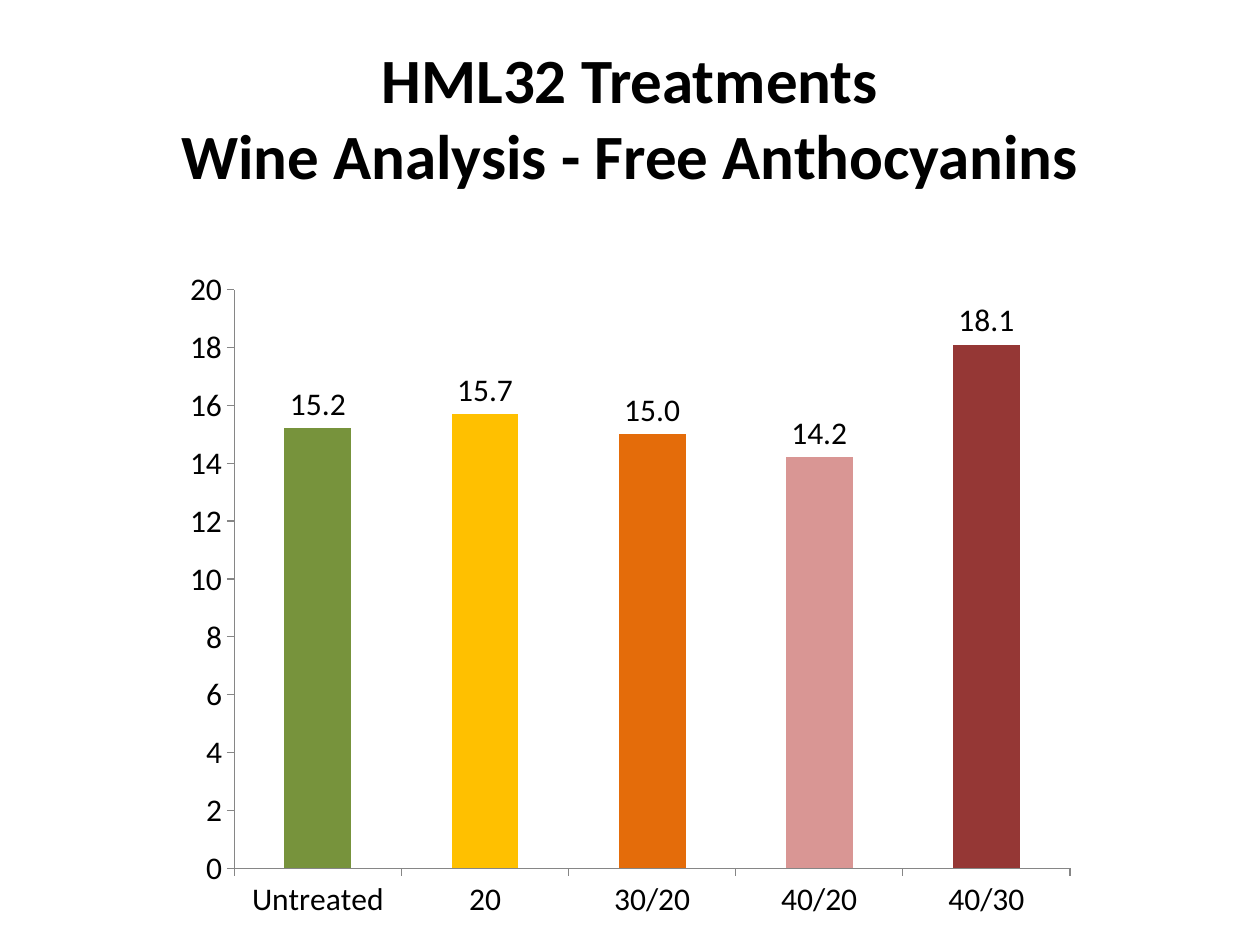
import pptx
import pptx.chart.data
import pptx.dml.color
import pptx.enum.chart
import pptx.enum.text
import pptx.oxml
import pptx.util

RGBColor = pptx.dml.color.RGBColor
Inches = pptx.util.Inches
Pt = pptx.util.Pt

BLACK = RGBColor(0x00, 0x00, 0x00)
GREY = RGBColor(0x86, 0x86, 0x86)
BLUE = RGBColor(0x4F, 0x81, 0xBD)
GREEN = RGBColor(0x77, 0x93, 0x3C)
YELLOW = RGBColor(0xFF, 0xC0, 0x00)
ORANGE = RGBColor(0xE4, 0x6C, 0x0A)
PINK = RGBColor(0xD9, 0x96, 0x94)
RED = RGBColor(0x95, 0x37, 0x35)

FONT = "Calibri"
TREATMENTS = [
    ("Untreated", 15.2, GREEN),
    ("20", 15.7, YELLOW),
    ("30/20", 15.0, ORANGE),
    ("40/20", 14.2, PINK),
    ("40/30", 18.1, RED),
]
PLOT = {"x": 0.067, "y": 0.118, "w": 0.925, "h": 0.799}


def set_attrs(obj, values):
    """Set each attribute named in values on obj."""
    for name, value in values.items():
        setattr(obj, name, value)


def set_font(font, size, bold=False):
    """Give a font the slide's typeface and colour."""
    set_attrs(font, {"name": FONT, "size": Pt(size), "bold": bold})
    font.color.rgb = BLACK


def add_title(s, lines):
    """Place and fill the title placeholder."""
    sp = s.shapes.title
    set_attrs(sp, {"left": Inches(0.5), "top": Inches(0.3),
                   "width": Inches(9), "height": Inches(1.25)})
    tf = sp.text_frame
    set_attrs(tf, {"word_wrap": True,
                   "auto_size": pptx.enum.text.MSO_AUTO_SIZE.NONE,
                   "vertical_anchor": pptx.enum.text.MSO_ANCHOR.MIDDLE})
    p = tf.paragraphs[0]
    p.alignment = pptx.enum.text.PP_ALIGN.CENTER
    for i, line in enumerate(lines):
        if i:
            p.add_line_break()
        r = p.add_run()
        r.text = line
        set_font(r.font, 36, bold=True)


def set_plot_layout(chart):
    """Fix the inner plot area as fractions of the chart."""
    area = chart.plots[0]._element.getparent()
    for old in area.findall(pptx.oxml.ns.qn("c:layout")):
        area.remove(old)
    sizes = "".join(f'<c:{k} val="{v}"/>' for k, v in PLOT.items())
    area.insert(0, pptx.oxml.parse_xml(
        f'<c:layout {pptx.oxml.ns.nsdecls("c")}><c:manualLayout>'
        '<c:layoutTarget val="inner"/><c:xMode val="edge"/>'
        f'<c:yMode val="edge"/>{sizes}</c:manualLayout></c:layout>'))


def format_axis(axis):
    """Show outside ticks and a thin grey line without gridlines."""
    set_attrs(axis, {
        "has_major_gridlines": False,
        "major_tick_mark": pptx.enum.chart.XL_TICK_MARK.OUTSIDE,
        "minor_tick_mark": pptx.enum.chart.XL_TICK_MARK.NONE,
    })
    axis.format.line.color.rgb = GREY
    axis.format.line.width = Pt(0.75)
    set_font(axis.tick_labels.font, 18)


def add_treatment_chart(s):
    """Add the column chart with one colour per treatment."""
    names, values, colors = zip(*TREATMENTS)
    data = pptx.chart.data.CategoryChartData()
    data.categories = names
    data.add_series("Series 1", values)
    chart = s.shapes.add_chart(
        pptx.enum.chart.XL_CHART_TYPE.COLUMN_CLUSTERED,
        Inches(1.38), Inches(1.62), Inches(7.17), Inches(5.75), data).chart
    set_attrs(chart, {"has_title": False, "has_legend": False})
    set_font(chart.font, 18)
    set_plot_layout(chart)

    format_axis(chart.category_axis)
    format_axis(chart.value_axis)
    set_attrs(chart.value_axis, {"minimum_scale": 0, "maximum_scale": 20,
                                 "major_unit": 2})
    set_attrs(chart.value_axis.tick_labels,
              {"number_format": "0", "number_format_is_linked": False})

    plot = chart.plots[0]
    set_attrs(plot, {"gap_width": 150, "vary_by_categories": False})
    series = plot.series[0]
    series.format.fill.solid()
    series.format.fill.fore_color.rgb = BLUE
    for i, color in enumerate(colors):
        fill = series.points[i].format.fill
        fill.solid()
        fill.fore_color.rgb = color
    labels = series.data_labels
    set_attrs(labels, {
        "show_value": True,
        "number_format": "0.0",
        "number_format_is_linked": False,
        "position": pptx.enum.chart.XL_LABEL_POSITION.OUTSIDE_END,
    })
    set_font(labels.font, 18)


def main():
    """Build and save the slide."""
    prs = pptx.Presentation()
    set_attrs(prs, {"slide_width": Inches(10), "slide_height": Inches(7.5)})
    s = prs.slides.add_slide(prs.slide_layouts[5])
    add_title(s, ["HML32 Treatments", "Wine Analysis - Free Anthocyanins"])
    add_treatment_chart(s)
    prs.save("out.pptx")


if __name__ == "__main__":
    main()
